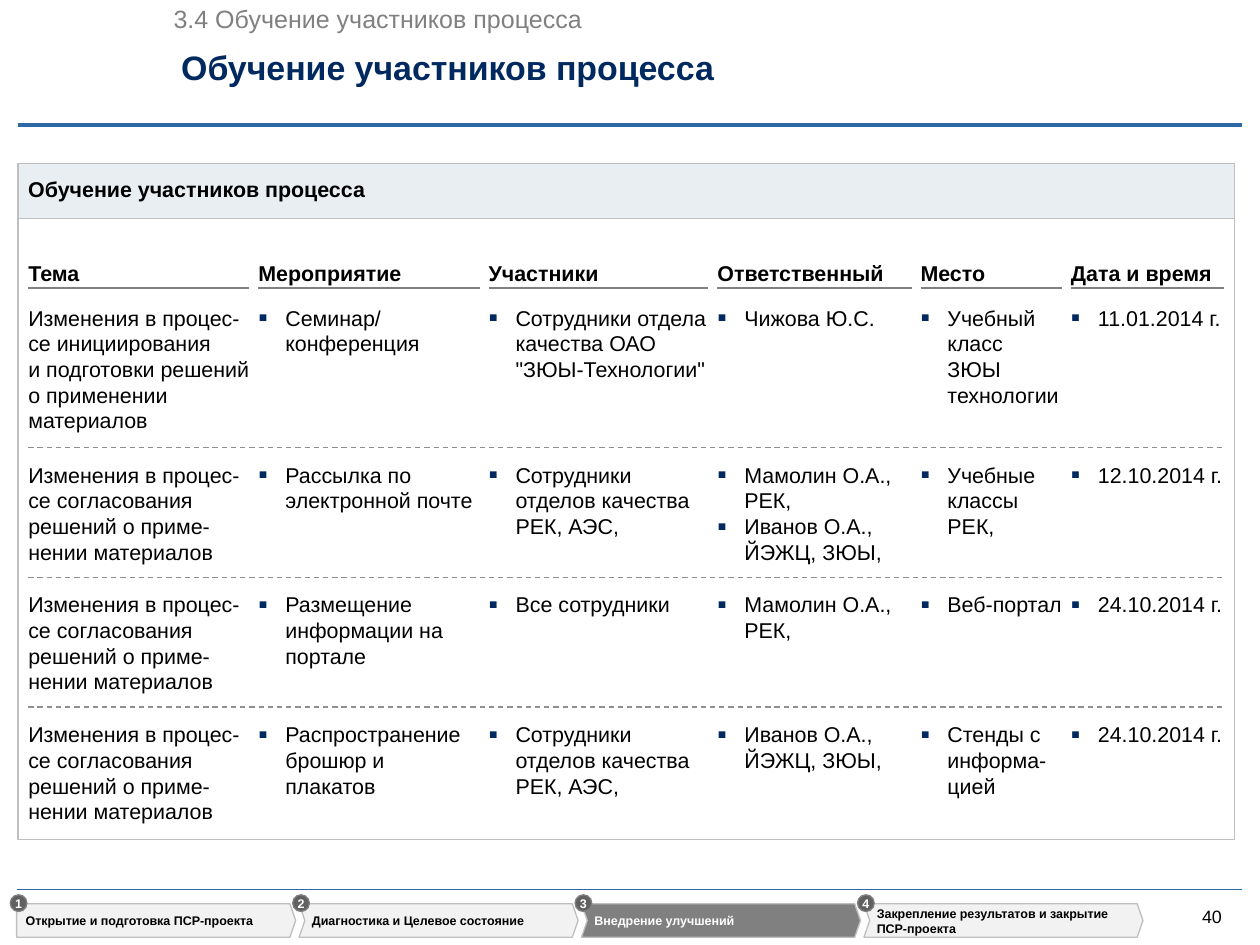
from collections import namedtuple
from itertools import accumulate

from lxml import etree
from pptx import Presentation, util as u
from pptx.dml.color import RGBColor
from pptx.enum import dml, shapes, text
from pptx.oxml import ns

COLORS = {"navy": "002960", "blue": "2E69A5", "black": "000000", "white": "FFFFFF",
          "gray": "808080", "dash": "8F8F8F", "border": "BFBFBF", "band": "E9EEF3",
          "step": "F2F2F2", "badge": "606060"}
CELL = u.Inches(0.01)
Box = namedtuple("Box", "left top width height")
PAGE = Box(0, 0, 980, 735)

PITCHES = [179, 179, 178, 158, 117, 126]
GAP = 7
ROW_TOPS = [110, 232, 333, 434]
HEADERS = ["Тема", "Мероприятие", "Участники", "Ответственный", "Место", "Дата и время"]
APPROVAL = "Изменения в процес-се согласования решений о приме-нении материалов"
ROWS = [
    ["Изменения в процес-се инициирования\vи подготовки решений\vо применении материалов",
     "Семинар/ конференция", "Сотрудники отдела качества ОАО \"ЗЮЫ-Технологии\"",
     "Чижова Ю.С.", "Учебный класс ЗЮЫ технологии", "11.01.2014 г."],
    [APPROVAL, "Рассылка по электронной почте", "Сотрудники отделов качества РЕК, АЭС,",
     "Мамолин О.А., РЕК,\nИванов О.А., ЙЭЖЦ, ЗЮЫ,", "Учебные классы РЕК,", "12.10.2014 г."],
    [APPROVAL, "Размещение информации на портале", "Все сотрудники",
     "Мамолин О.А., РЕК,", "Веб-портал", "24.10.2014 г."],
    [APPROVAL, "Распространение брошюр и плакатов", "Сотрудники отделов качества РЕК, АЭС,",
     "Иванов О.А., ЙЭЖЦ, ЗЮЫ,", "Стенды с информа-цией", "24.10.2014 г."],
]
STEPS = ["Открытие и подготовка ПСР-проекта", "Диагностика и Целевое состояние",
         "Внедрение улучшений", "Закрепление результатов и закрытие ПСР-проекта"]
CURRENT_STEP = 2


def color(name):
    """Return the named colour."""
    return RGBColor.from_string(COLORS[name])


def emu(*cells):
    """Convert grid cells to slide units."""
    return [round(cell * CELL) for cell in cells]


def add_bullet(para):
    """Give a paragraph a small navy square bullet."""
    props = para._p.get_or_add_pPr()
    indent = u.Inches(0.21)
    props.set("marL", str(indent))
    props.set("indent", str(-indent))
    paint = etree.SubElement(props, ns.qn("a:buClr"))
    etree.SubElement(paint, ns.qn("a:srgbClr"), val=COLORS["navy"])
    etree.SubElement(props, ns.qn("a:buSzPct"), val="125000")
    etree.SubElement(props, ns.qn("a:buFont"), typeface="Arial")
    etree.SubElement(props, ns.qn("a:buChar"), char="▪")


def write(shape, words, size, ink="black", bold=False, anchor="TOP", align="LEFT",
          wrap=True, bullet=False, bottom=0):
    """Fill a shape with evenly styled text."""
    frame = shape.text_frame
    frame.margin_left = frame.margin_right = frame.margin_top = 0
    frame.margin_bottom = round(bottom * CELL)
    frame.word_wrap = wrap
    frame.vertical_anchor = text.MSO_ANCHOR[anchor]
    frame.text = words
    for para in frame.paragraphs:
        para.alignment = text.PP_ALIGN[align]
        if bullet:
            add_bullet(para)
        font = para.font
        font.name, font.size, font.bold = "Arial", u.Pt(size), bold
        font.color.rgb = color(ink)


def add_text(page, box, words, size, **style):
    """Place a text box."""
    write(page.shapes.add_textbox(*emu(*box)), words, size, **style)


def paint(shape, fill=None, line=None):
    """Set fill and outline, without shadow."""
    shape.shadow.inherit = False
    if fill:
        shape.fill.solid()
        shape.fill.fore_color.rgb = color(fill)
    else:
        shape.fill.background()
    if line:
        shape.line.color.rgb = color(line)
        shape.line.width = u.Pt(0.75)
    else:
        shape.line.fill.background()


def add_panel(page, box, kind="RECTANGLE", **look):
    """Place a preset shape."""
    panel = page.shapes.add_shape(shapes.MSO_SHAPE[kind], *emu(*box))
    paint(panel, **look)
    return panel


def add_rule(page, left, right, top, ink, width=0.75, dashed=False):
    """Draw a horizontal line."""
    rule = page.shapes.add_connector(shapes.MSO_CONNECTOR.STRAIGHT, *emu(left, top, right, top))
    rule.line.color.rgb = color(ink)
    rule.line.width = u.Pt(width)
    if dashed:
        rule.line.dash_style = dml.MSO_LINE.DASH
    etree.SubElement(rule._element.spPr, ns.qn("a:effectLst"))


def add_heading(page, box):
    """Place the section name, the title and the line below them."""
    left, top, width, height = box
    add_text(page, Box(left + 121, top + 3, 320, 24), "3.4 Обучение участников процесса", 14,
             ink="gray", wrap=False)
    add_text(page, Box(left + 127, top + 36, 727, 32), "Обучение участников процесса", 19,
             ink="navy", bold=True, anchor="MIDDLE")
    add_rule(page, left, left + width, top + height, "blue", 2.25)


def add_training_plan(page, box):
    """Place the framed training plan with its headers and rows."""
    left, top, width, height = box
    inner = left + 8
    add_panel(page, box, line="border")
    add_panel(page, Box(left, top, width, 43), fill="band", line="border")
    add_text(page, Box(inner, top + 10, 466, 22), "Обучение участников процесса", 12,
             bold=True, anchor="BOTTOM", bottom=2)
    starts = list(accumulate(PITCHES[:-1], initial=inner))
    for start, pitch, header in zip(starts, PITCHES, HEADERS):
        add_rule(page, start, start + pitch - GAP, top + 97, "gray")
        add_text(page, Box(start, top + 75, pitch - GAP, 22), header, 12,
                 bold=True, anchor="BOTTOM", bottom=2)
    for number, (offset, row) in enumerate(zip(ROW_TOPS, ROWS)):
        if number:
            add_rule(page, inner, inner + sum(PITCHES) - GAP, top + offset - 11, "dash", dashed=True)
        for column, words in enumerate(row):
            span = PITCHES[column] - (GAP if column else 0)
            add_text(page, Box(starts[column], top + offset, span, 81), words, 12,
                     bullet=column > 0)


def add_step(page, box, number, words):
    """Place one numbered project step."""
    left, top, width, height = box
    tip, middle = 4.5, top + height / 2
    notch = tip if number else 0
    shoulder, bottom = left + width - tip, top + height
    outline = page.shapes.build_freeform(*emu(left, top), scale=1.0)
    outline.add_line_segments([emu(*point) for point in (
        (shoulder, top), (left + width, middle), (shoulder, bottom),
        (left, bottom), (left + notch, middle))])
    current = number == CURRENT_STEP
    fill = "gray" if current else "step"
    paint(outline.convert_to_shape(), fill=fill, line="border")
    start = left + 7 + (3 if number else 0)
    label = add_panel(page, Box(start, top + 2, shoulder - start, height - 4), fill=fill)
    write(label, words, 7, ink="white" if current else "black", bold=True, anchor="MIDDLE")
    badge = add_panel(page, Box(left - 5, top - 7, 13, 13), "OVAL", fill="badge", line="gray")
    write(badge, str(number + 1), 7, ink="white", bold=True, anchor="MIDDLE",
          align="CENTER", wrap=False)


def add_footer(page, box):
    """Place the project steps and the page number."""
    left, top, width, height = box
    add_rule(page, left, left + width, top, "blue")
    for number, words in enumerate(STEPS):
        add_step(page, Box(left + number * 219.67, top + 11, 217, 26), number, words)
    add_text(page, Box(left + 922, top + 12, 23, 17), "40", 10, anchor="MIDDLE", wrap=False)


def main():
    """Build and save the slide."""
    deck = Presentation()
    deck.slide_width, deck.slide_height = emu(PAGE.width, PAGE.height)
    page = deck.slides.add_slide(deck.slide_layouts[6])
    add_heading(page, Box(14, 0, 952, 97))
    add_training_plan(page, Box(14, 127, 946, 526))
    add_footer(page, Box(13, 692, 953, 43))
    deck.save("out.pptx")


if __name__ == "__main__":
    main()
